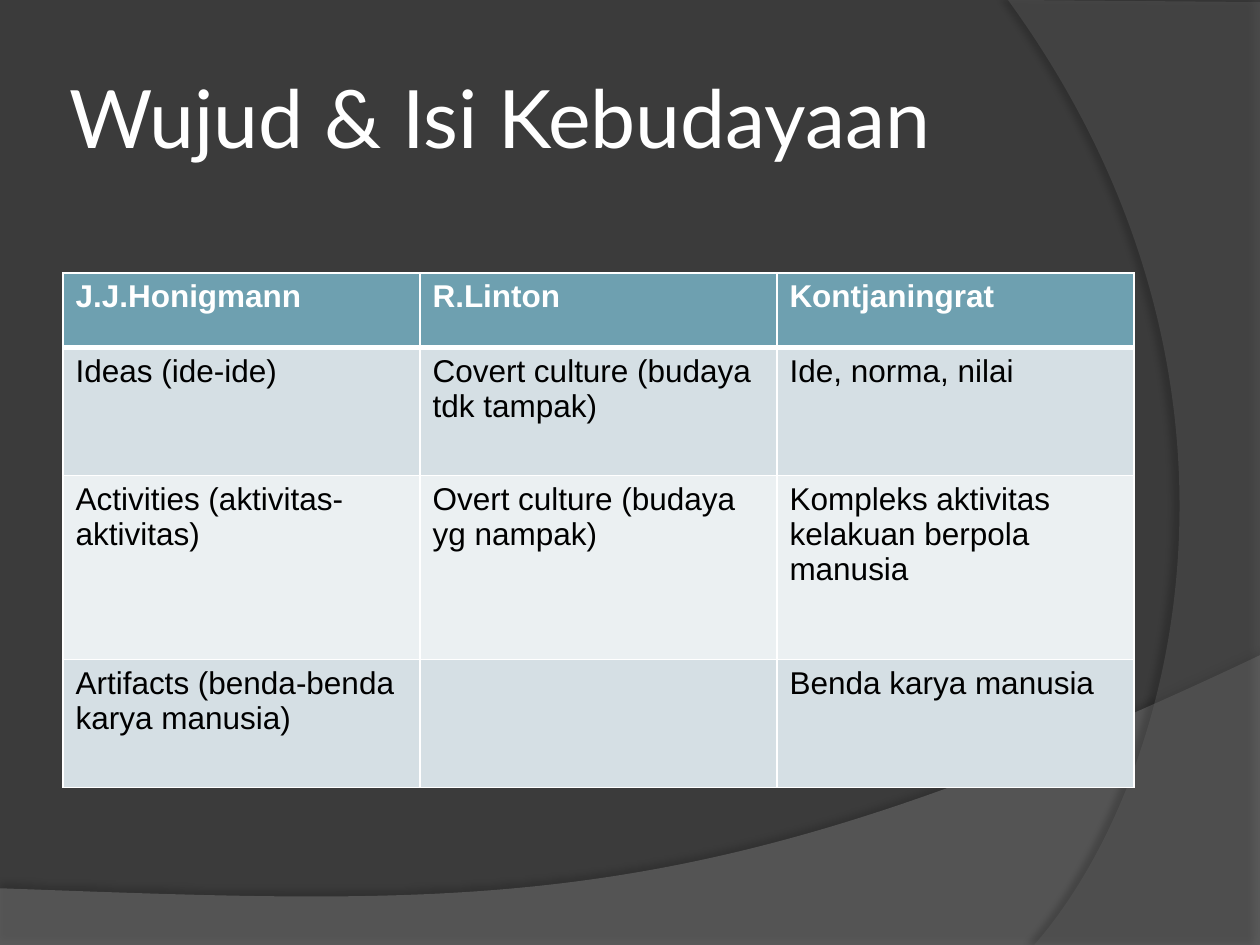
from lxml.etree import SubElement
from pptx import Presentation
from pptx.dml.color import RGBColor
from pptx.enum.text import MSO_ANCHOR
from pptx.oxml.ns import qn
from pptx.util import Pt

PX = 7620
THEME = {
    "background": "3B3B3B", "wave": "7F7F7F", "arc": "5E5E5E",
    "shadow": "000000", "border": "FFFFFF", "title": "FFFFFF",
    "header_fill": "6EA0B0", "header_text": "FFFFFF", "body_text": "000000",
    "bands": ["D5DFE4", "EBF0F2"],
    "title_font": "Lato", "table_font": "Arial",
    "title_size": 46, "table_size": 18,
}


def add_swoosh(corners, curve, color, opacity, shadow_opacity, distance, direction):
    outline = corners + [curve[0], curve[-1]]
    builder = shapes.build_freeform(*outline[0], scale=PX)
    builder.add_line_segments(outline[1:], close=True)
    shape = builder.convert_to_shape()
    left = min(x for x, y in outline)
    top = min(y for x, y in outline)
    segment = list(shape._element.iter(qn("a:lnTo")))[-1]
    segment.tag = qn("a:cubicBezTo")
    segment.remove(segment[0])
    for x, y in curve[1:]:
        SubElement(segment, qn("a:pt"), x=str(x - left), y=str(y - top))
    shape.shadow.inherit = False
    shape.line.fill.background()
    shape.fill.solid()
    shape.fill.fore_color.rgb = RGBColor.from_string(color)
    properties = shape._element.spPr
    fill_color = properties.find(qn("a:solidFill"))[0]
    SubElement(fill_color, qn("a:alpha"), val=str(opacity * 1000))
    shadow = SubElement(properties.find(qn("a:effectLst")), qn("a:outerShdw"),
                        blurRad=str(Pt(4)), dist=str(Pt(distance)),
                        dir=str(direction * 60000), rotWithShape="0")
    shadow_color = SubElement(shadow, qn("a:srgbClr"), val=THEME["shadow"])
    SubElement(shadow_color, qn("a:alpha"), val=str(shadow_opacity * 1000))


def format_run(run, font, size, color, bold=False):
    run.font.name = font
    run.font.size = Pt(size)
    run.font.bold = bold
    run.font.color.rgb = RGBColor.from_string(color)


presentation = Presentation()
presentation.slide_width = 1200 * PX
presentation.slide_height = 900 * PX
slide = presentation.slides.add_slide(presentation.slide_layouts[6])
shapes = slide.shapes
slide.background.fill.solid()
slide.background.fill.fore_color.rgb = RGBColor.from_string(THEME["background"])

add_swoosh([(0, 901), (1200, 901)],
           [(1200, 624), (671, 875), (469, 863), (0, 846)],
           THEME["wave"], 45, 35, 3.5, 270)
add_swoosh([(1200, 2), (1200, 900)],
           [(985, 900), (1122, 743), (1222, 360), (960, 0)],
           THEME["arc"], 40, 45, 4, 180)

title = shapes.add_textbox(60 * PX, 36 * PX, 980 * PX, 150 * PX)
title_frame = title.text_frame
title_frame.word_wrap = True
title_frame.vertical_anchor = MSO_ANCHOR.MIDDLE
title_frame.margin_left = title_frame.margin_right = 6 * PX
title_frame.margin_top = title_frame.margin_bottom = 6 * PX
title_frame.text = "Wujud & Isi Kebudayaan"
format_run(title_frame.paragraphs[0].runs[0],
           THEME["title_font"], THEME["title_size"], THEME["title"])

rows = [
    ("J.J.Honigmann", "R.Linton", "Kontjaningrat"),
    ("Ideas (ide-ide)", "Covert culture (budaya tdk tampak)", "Ide, norma, nilai"),
    ("Activities (aktivitas-aktivitas)", "Overt culture (budaya yg nampak)",
     "Kompleks aktivitas kelakuan berpola manusia"),
    ("Artifacts (benda-benda karya manusia)", "", "Benda karya manusia"),
]
row_heights = [71, 122, 175, 122]
column_width = 340
table = shapes.add_table(len(rows), 3, 60 * PX, 260 * PX,
                         3 * column_width * PX, sum(row_heights) * PX).table
for column in table.columns:
    column.width = column_width * PX

for row_index, (texts, height) in enumerate(zip(rows, row_heights)):
    table.rows[row_index].height = height * PX
    is_header = row_index == 0
    fill = THEME["header_fill"] if is_header else THEME["bands"][(row_index - 1) % 2]
    text_color = THEME["header_text"] if is_header else THEME["body_text"]
    borders = {"lnL": 1, "lnR": 1, "lnT": 3 if row_index == 1 else 1,
               "lnB": 3 if is_header else 1}
    for column_index, text in enumerate(texts):
        cell = table.cell(row_index, column_index)
        cell_properties = cell._tc.get_or_add_tcPr()
        for side, width in borders.items():
            line = SubElement(cell_properties, qn("a:" + side), w=str(Pt(width)))
            line_fill = SubElement(line, qn("a:solidFill"))
            SubElement(line_fill, qn("a:srgbClr"), val=THEME["border"])
        cell.fill.solid()
        cell.fill.fore_color.rgb = RGBColor.from_string(fill)
        cell.text_frame.text = text
        for run in cell.text_frame.paragraphs[0].runs:
            format_run(run, THEME["table_font"], THEME["table_size"], text_color, is_header)

presentation.save("out.pptx")
